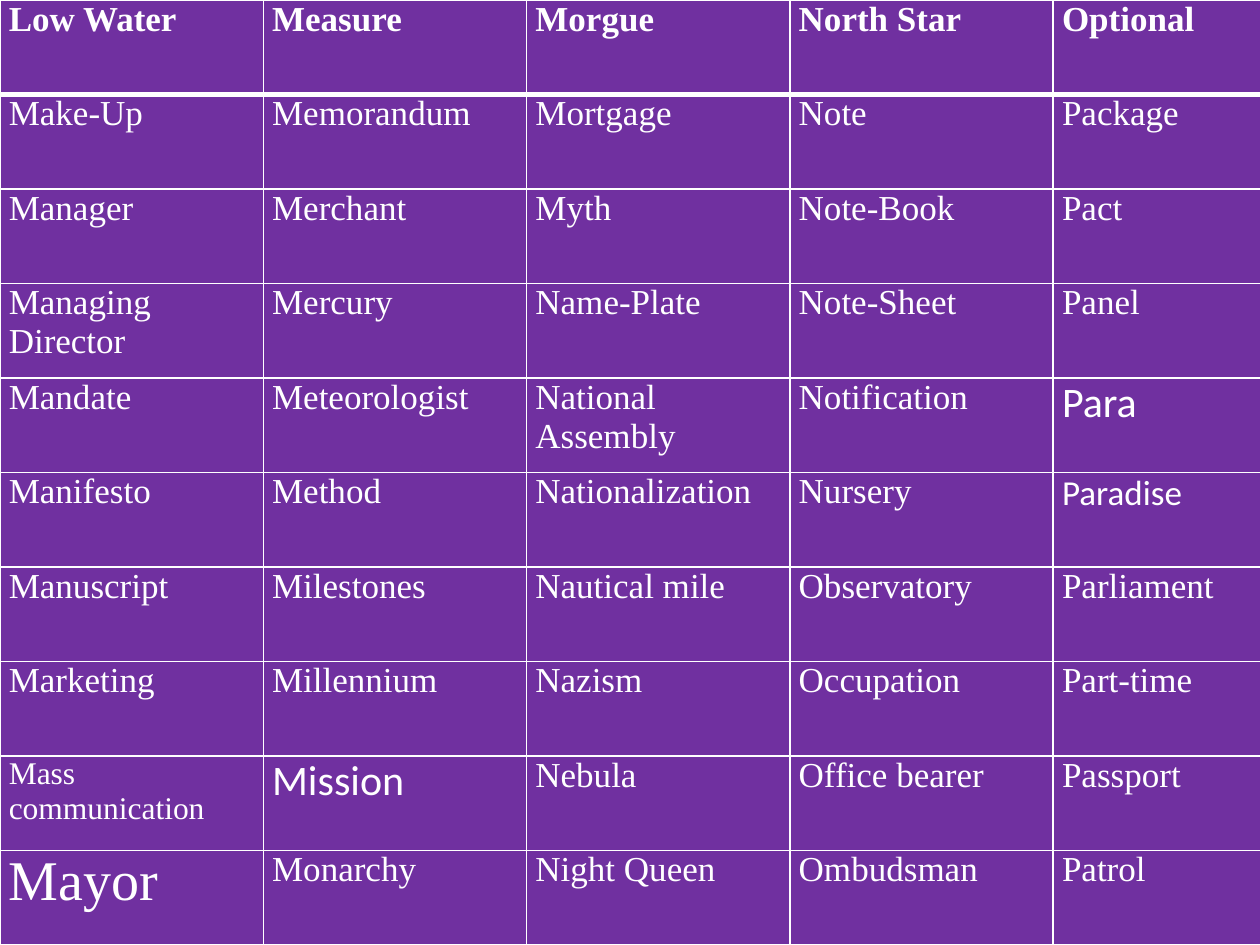
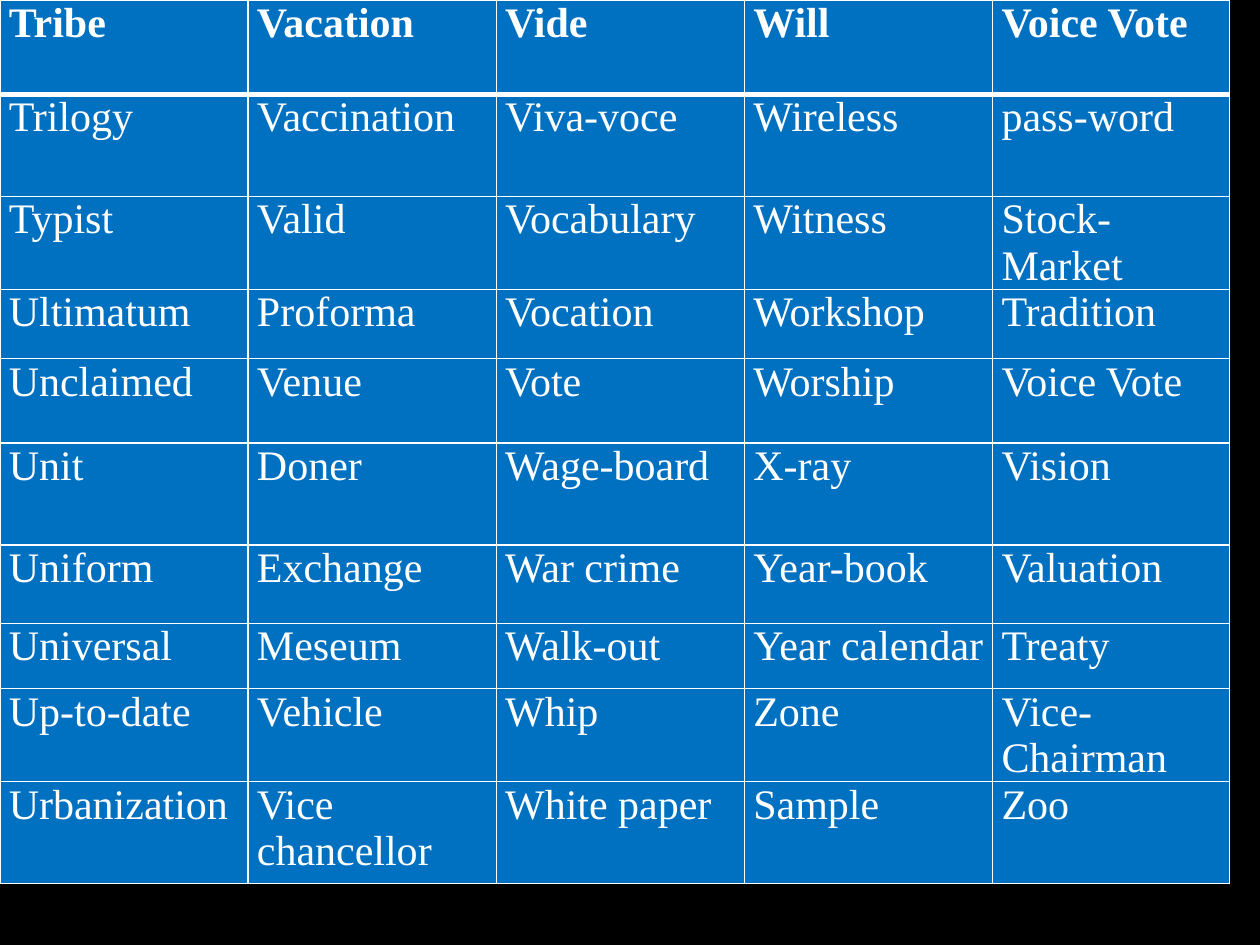
from lxml.etree import SubElement
from pptx import Presentation
from pptx.dml.color import RGBColor
from pptx.oxml.ns import qn
from pptx.util import Inches, Pt

BLACK = RGBColor(0x00, 0x00, 0x00)
WHITE = RGBColor(0xFF, 0xFF, 0xFF)
PURPLE = RGBColor(0x70, 0x30, 0xA0)
BLUE = RGBColor(0x00, 0x70, 0xC0)
SERIF = "Times New Roman"
SANS = "Calibri"
THIN, THICK = Pt(1), Pt(3)
MARGINS = {
    "margin_left": Inches(0.07),
    "margin_right": Inches(0.07),
    "margin_top": 0,
    "margin_bottom": 0,
}

WORDS_L_TO_P = [
    ["Low Water", "Measure", "Morgue", "North Star", "Optional"],
    ["Make-Up", "Memorandum", "Mortgage", "Note", "Package"],
    ["Manager", "Merchant", "Myth", "Note-Book", "Pact"],
    ["Managing Director", "Mercury", "Name-Plate", "Note-Sheet", "Panel"],
    ["Mandate", "Meteorologist", "National Assembly", "Notification", "Para"],
    ["Manifesto", "Method", "Nationalization", "Nursery", "Paradise"],
    ["Manuscript", "Milestones", "Nautical mile", "Observatory", "Parliament"],
    ["Marketing", "Millennium", "Nazism", "Occupation", "Part-time"],
    ["Mass communication", "Mission", "Nebula", "Office bearer", "Passport"],
    ["Mayor", "Monarchy", "Night Queen", "Ombudsman", "Patrol"],
]
WORDS_T_TO_Z = [
    ["Tribe", "Vacation", "Vide", "Will", "Voice Vote"],
    ["Trilogy", "Vaccination", "Viva-voce", "Wireless", "pass-word"],
    ["Typist", "Valid", "Vocabulary", "Witness", "Stock-Market"],
    ["Ultimatum", "Proforma", "Vocation", "Workshop", "Tradition"],
    ["Unclaimed", "Venue", "Vote", "Worship", "Voice Vote"],
    ["Unit", "Doner", "Wage-board", "X-ray", "Vision"],
    ["Uniform", "Exchange", "War crime", "Year-book", "Valuation"],
    ["Universal", "Meseum", "Walk-out", "Year calendar", "Treaty"],
    ["Up-to-date", "Vehicle", "Whip", "Zone", "Vice-Chairman"],
    ["Urbanization", "Vice chancellor", "White paper", "Sample", "Zoo"],
]
SPECIAL_FONTS = {
    "Para": {"size": Pt(24), "name": SANS},
    "Paradise": {"name": SANS},
    "Mass communication": {"size": Pt(18)},
    "Mission": {"size": Pt(24), "name": SANS},
    "Mayor": {"size": Pt(32)},
}


def set_attributes(target, values):
    """Set each named attribute of the target."""
    for name, value in values.items():
        setattr(target, name, value)


def draw_borders(cell, row_index):
    """Draw white cell edges, with a thick rule under the header row."""
    widths = {
        "a:lnL": THIN,
        "a:lnR": THIN,
        "a:lnT": THICK if row_index == 1 else THIN,
        "a:lnB": THICK if row_index == 0 else THIN,
    }
    properties = cell._tc.get_or_add_tcPr()
    for tag, width in widths.items():
        line = SubElement(properties, qn(tag), w=str(int(width)))
        fill = SubElement(line, qn("a:solidFill"))
        SubElement(fill, qn("a:srgbClr"), val=str(WHITE))


def fill_cell(cell, word, row_index, color, size):
    """Write one word in a coloured and bordered cell."""
    set_attributes(cell, MARGINS)
    draw_borders(cell, row_index)
    cell.fill.solid()
    cell.fill.fore_color.rgb = color
    run = cell.text_frame.paragraphs[0].add_run()
    run.text = word
    font_values = {"name": SERIF, "size": size, "bold": row_index == 0}
    set_attributes(run.font, font_values | SPECIAL_FONTS.get(word, {}))
    run.font.color.rgb = WHITE


def add_word_table(slide, box, words, column_widths, row_heights, color, size):
    """Place a table of words in the given box."""
    left, top, width, height = map(Inches, box)
    shape = slide.shapes.add_table(
        len(words), len(words[0]), left, top, width, height
    )
    table = shape.table
    table.horz_banding = False
    for column, column_width in zip(table.columns, column_widths):
        column.width = Inches(column_width)
    for row, row_height in zip(table.rows, row_heights):
        row.height = Inches(row_height)
    set_attributes(shape, {"width": width, "height": height})
    for row_index, row_words in enumerate(words):
        for column_index, word in enumerate(row_words):
            cell = table.cell(row_index, column_index)
            fill_cell(cell, word, row_index, color, size)


def add_word_slide(presentation, **table_values):
    """Add a black slide that holds one word table."""
    slide = presentation.slides.add_slide(presentation.slide_layouts[6])
    slide.background.fill.solid()
    slide.background.fill.fore_color.rgb = BLACK
    add_word_table(slide, **table_values)


def main():
    """Build and save the two vocabulary slides."""
    presentation = Presentation()
    presentation.slide_width = Inches(10)
    presentation.slide_height = Inches(7.5)
    add_word_slide(
        presentation,
        box=(0, 0, 10, 7.5),
        words=WORDS_L_TO_P,
        column_widths=[2.09] * 4 + [1.66],
        row_heights=[0.75] * 10,
        color=PURPLE,
        size=Pt(20),
    )
    add_word_slide(
        presentation,
        box=(0, 0, 9.75, 7.44),
        words=WORDS_T_TO_Z,
        column_widths=[1.97] * 4 + [1.88],
        row_heights=[0.75, 0.81, 0.6, 0.55, 0.67, 0.81, 0.62, 0.52, 0.63, 0.81],
        color=BLUE,
        size=Pt(24),
    )
    presentation.save("out.pptx")


if __name__ == "__main__":
    main()
